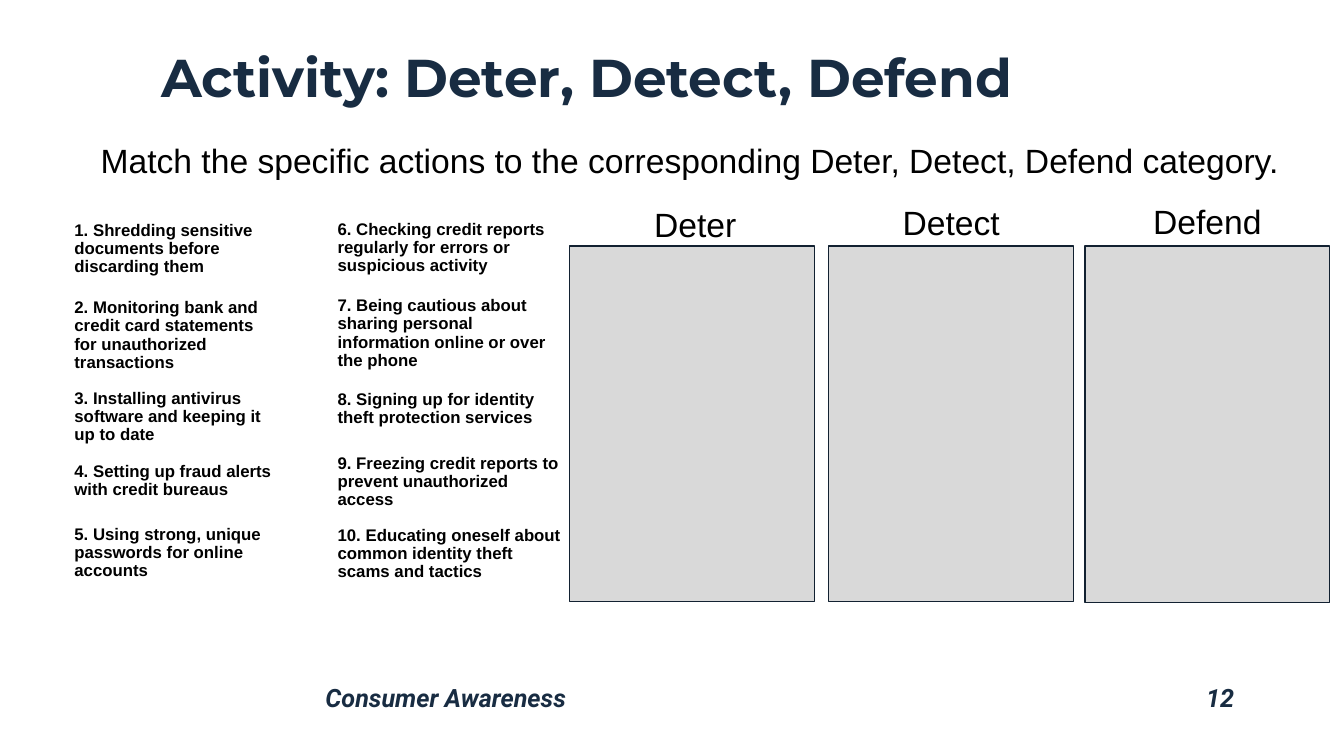
from pptx import Presentation, util as u
from pptx.dml import color
from pptx.enum import shapes, text

NAVY, BLACK, GREY, EDGE = "182C42", "000000", "D9D9D9", "122131"
LEFT, CENTER, RIGHT = text.PP_ALIGN.LEFT, text.PP_ALIGN.CENTER, text.PP_ALIGN.RIGHT


def rgb(code):
    return color.RGBColor.from_string(code)


class ActivitySlide:
    styles = {
        "title": dict(name="Montserrat", size=u.Pt(38), bold=True),
        "footer": dict(name="Roboto", size=u.Pt(18), bold=True, italic=True),
        "heading": dict(name="Arial", size=u.Pt(24)),
        "action": dict(name="Arial", size=u.Pt(12), bold=True),
    }
    colors = dict(title=NAVY, footer=NAVY, heading=BLACK, action=BLACK)

    def __init__(self, deck):
        self.slide = deck.slides.add_slide(deck.slide_layouts[6])

    def label(self, words, place, style, align=LEFT, anchor=text.MSO_ANCHOR.TOP):
        frame = self.slide.shapes.add_textbox(*map(u.Inches, place)).text_frame
        frame.word_wrap = True
        frame.vertical_anchor = anchor
        paragraph = frame.paragraphs[0]
        paragraph.alignment = align
        paragraph.line_spacing = 0.9
        run = paragraph.add_run()
        run.text = words
        for key, value in self.styles[style].items():
            setattr(run.font, key, value)
        run.font.color.rgb = rgb(self.colors[style])

    def answer_area(self, place):
        area = self.slide.shapes.add_shape(
            shapes.MSO_SHAPE.RECTANGLE, *map(u.Inches, place))
        area.shadow.inherit = False
        area.fill.solid()
        area.fill.fore_color.rgb = rgb(GREY)
        area.line.color.rgb = rgb(EDGE)
        area.line.width = u.Pt(1)


def main():
    deck = Presentation()
    deck.slide_width, deck.slide_height = u.Inches(13.33), u.Inches(7.5)
    activity = ActivitySlide(deck)

    # Title and instruction
    activity.label("Activity: Deter, Detect, Defend", (1.5, 0.11, 10.84, 1.02),
                   "title", anchor=text.MSO_ANCHOR.BOTTOM)
    activity.label("Match the specific actions to the corresponding "
                   "Deter, Detect, Defend category.",
                   (0.9, 1.38, 11.95, 0.42), "heading")

    # Actions to sort: column left, column width, then top and wording of each
    action_columns = [
        (0.64, 2.23, [
            (2.15, "1. Shredding sensitive documents before discarding them"),
            (2.92, "2. Monitoring bank and credit card statements for unauthorized transactions"),
            (3.82, "3. Installing antivirus software and keeping it up to date"),
            (4.54, "4. Setting up fraud alerts with credit bureaus"),
            (5.17, "5. Using strong, unique passwords for online accounts"),
        ]),
        (3.25, 2.42, [
            (2.14, "6. Checking credit reports regularly for errors or suspicious activity"),
            (2.9, "7. Being cautious about sharing personal information online or over the phone"),
            (3.83, "8. Signing up for identity theft protection services"),
            (4.46, "9. Freezing credit reports to prevent unauthorized access"),
            (5.18, "10. Educating oneself about common identity theft scams and tactics"),
        ]),
    ]
    for left, width, actions in action_columns:
        for top, action in actions:
            activity.label(action, (left, top, width, 0.62), "action")

    # Categories with their answer areas
    categories = [
        ("Deter", 5.65, 5.68, 2.02, 3.53),
        ("Detect", 8.22, 8.22, 2.0, 3.53),
        ("Defend", 10.76, 10.76, 1.99, 3.54),
    ]
    for category, area_left, name_left, name_top, area_height in categories:
        activity.answer_area((area_left, 2.44, 2.43, area_height))
        activity.label(category, (name_left, name_top, 2.43, 0.42),
                       "heading", CENTER)

    # Footer
    activity.label("Consumer Awareness", (3.13, 6.75, 7.63, 0.38), "footer")
    activity.label("12", (10.76, 6.75, 1.58, 0.38), "footer", RIGHT)

    deck.save("out.pptx")


if __name__ == "__main__":
    main()
